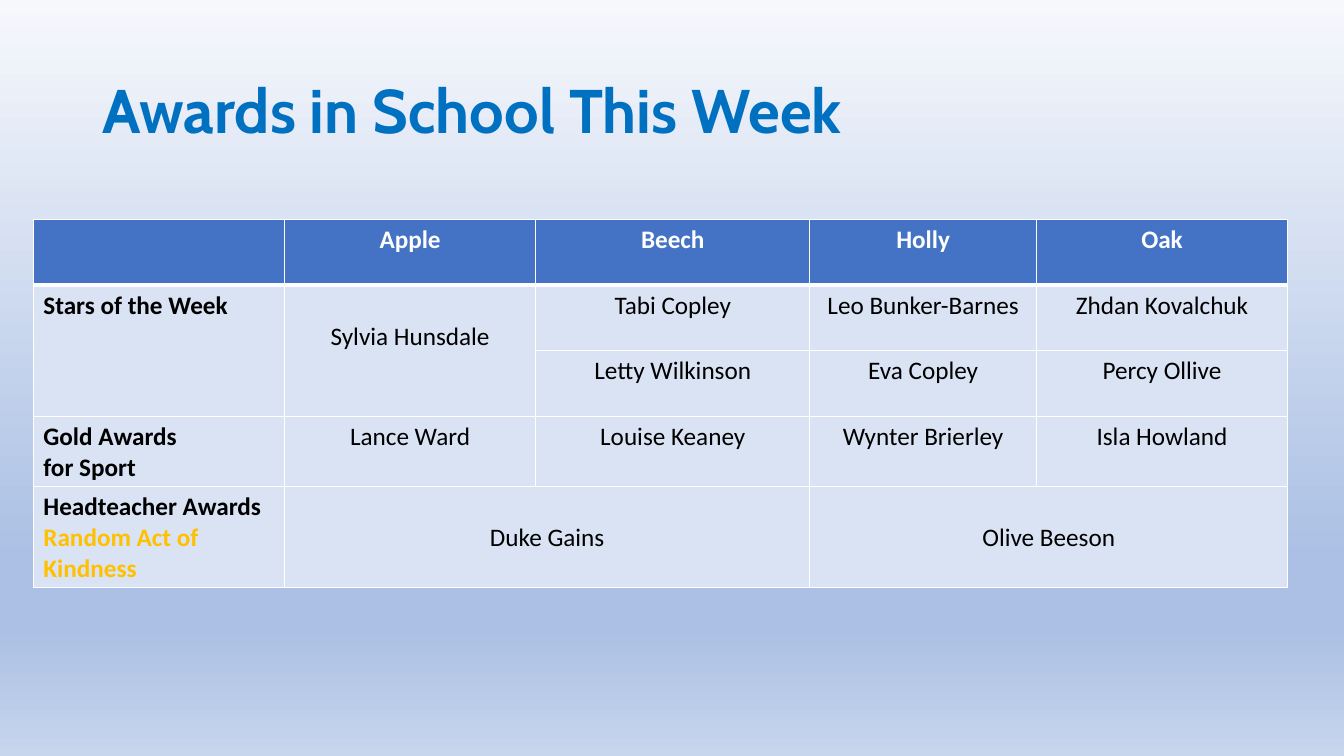
from lxml.etree import SubElement
from pptx import Presentation
from pptx.dml.color import RGBColor
from pptx.enum.text import MSO_ANCHOR, PP_ALIGN
from pptx.oxml import parse_xml
from pptx.oxml.ns import nsdecls, qn
from pptx.util import Cm, Pt

COLORS = {
    "title": "0070C0",
    "header": "4472C4",
    "body": "DAE3F3",
    "white": "FFFFFF",
    "black": "000000",
    "gold": "FFC000",
}
BACKGROUND = [(0, "F6F8FC"), (74, "ABC0E4"), (83, "ABC0E4"), (100, "C7D5ED")]
COLUMNS = [6.33, 6.33, 6.91, 5.71, 6.33]
ROW_HEIGHT = 1.65
LOWERED = 0.9
AWARDS = [
    ["", "Apple", "Beech", "Holly", "Oak"],
    ["Stars of the Week", "Sylvia Hunsdale", "Tabi Copley", "Leo Bunker-Barnes", "Zhdan Kovalchuk"],
    ["", "", "Letty Wilkinson", "Eva Copley", "Percy Ollive"],
    ["Gold Awards\nfor Sport", "Lance Ward", "Louise Keaney", "Wynter Brierley", "Isla Howland"],
    ["Headteacher Awards ", "Duke Gains", "", "Olive Beeson", ""],
]
MERGES = [((1, 0), (2, 0)), ((1, 1), (2, 1)), ((4, 1), (4, 2)), ((4, 3), (4, 4))]
LOWERED_CELLS = [(1, 1), (4, 1), (4, 3)]


def set_background(slide):
    fill = slide.background.fill
    fill.gradient()
    fill.gradient_angle = 270
    stops = slide.element.find(".//" + qn("a:gsLst"))
    for stop in list(stops):
        stops.remove(stop)
    for position, color in BACKGROUND:
        stop = SubElement(stops, qn("a:gs"), pos=str(position * 1000))
        SubElement(stop, qn("a:srgbClr"), val=color)


def add_run(p, text, size, color, bold=False, font="Calibri"):
    r = p.add_run()
    r.text = text
    r.font.name = font
    r.font.size = Pt(size)
    r.font.bold = bold
    r.font.color.rgb = RGBColor.from_string(COLORS[color])


def add_title(slide, text):
    sp = slide.shapes.add_textbox(Cm(2.33), Cm(1.01), Cm(29.21), Cm(3.68))
    tf = sp.text_frame
    tf.word_wrap = True
    tf.vertical_anchor = MSO_ANCHOR.MIDDLE
    p = tf.paragraphs[0]
    p.line_spacing = 0.9
    add_run(p, text, 44, "title", True, "Cabin")


def set_borders(cell, row):
    widths = {"L": 1, "R": 1, "T": 3 if row == 1 else 1, "B": 3 if row == 0 else 1}
    tc_pr = cell._tc.get_or_add_tcPr()
    for i, (side, width) in enumerate(widths.items()):
        tc_pr.insert(i, parse_xml(
            f'<a:ln{side} {nsdecls("a")} w="{Pt(width)}"><a:solidFill>'
            f'<a:srgbClr val="{COLORS["white"]}"/></a:solidFill></a:ln{side}>'
        ))


def fill_cell(cell, row, col, text):
    is_header = row == 0
    cell.fill.solid()
    cell.fill.fore_color.rgb = RGBColor.from_string(COLORS["header" if is_header else "body"])
    set_borders(cell, row)
    if (row, col) in LOWERED_CELLS:
        cell.margin_top = Cm(LOWERED)
    if not text:
        return
    tf = cell.text_frame
    for i, line in enumerate(text.split("\n")):
        p = tf.paragraphs[0] if i == 0 else tf.add_paragraph()
        p.alignment = PP_ALIGN.CENTER if col else PP_ALIGN.LEFT
        add_run(p, line, 18, "white" if is_header else "black", is_header or col == 0)


def add_awards_table(slide):
    rows, cols = len(AWARDS), len(COLUMNS)
    table = slide.shapes.add_table(
        rows, cols, Cm(0.84), Cm(5.54), Cm(sum(COLUMNS)), Cm(ROW_HEIGHT * rows)
    ).table
    table.horz_banding = False
    for column, width in zip(table.columns, COLUMNS):
        column.width = Cm(width)
    for row, texts in enumerate(AWARDS):
        table.rows[row].height = Cm(ROW_HEIGHT)
        for col, text in enumerate(texts):
            fill_cell(table.cell(row, col), row, col, text)
    for start, end in MERGES:
        table.cell(*start).merge(table.cell(*end))
    headteacher = table.cell(4, 0).text_frame.paragraphs[0]
    add_run(headteacher, "Random Act of Kindness", 18, "gold", True)


def main():
    prs = Presentation()
    prs.slide_width, prs.slide_height = Cm(33.87), Cm(19.05)
    slide = prs.slides.add_slide(prs.slide_layouts[6])
    set_background(slide)
    add_title(slide, "Awards in School This Week")
    add_awards_table(slide)
    prs.save("out.pptx")


if __name__ == "__main__":
    main()
